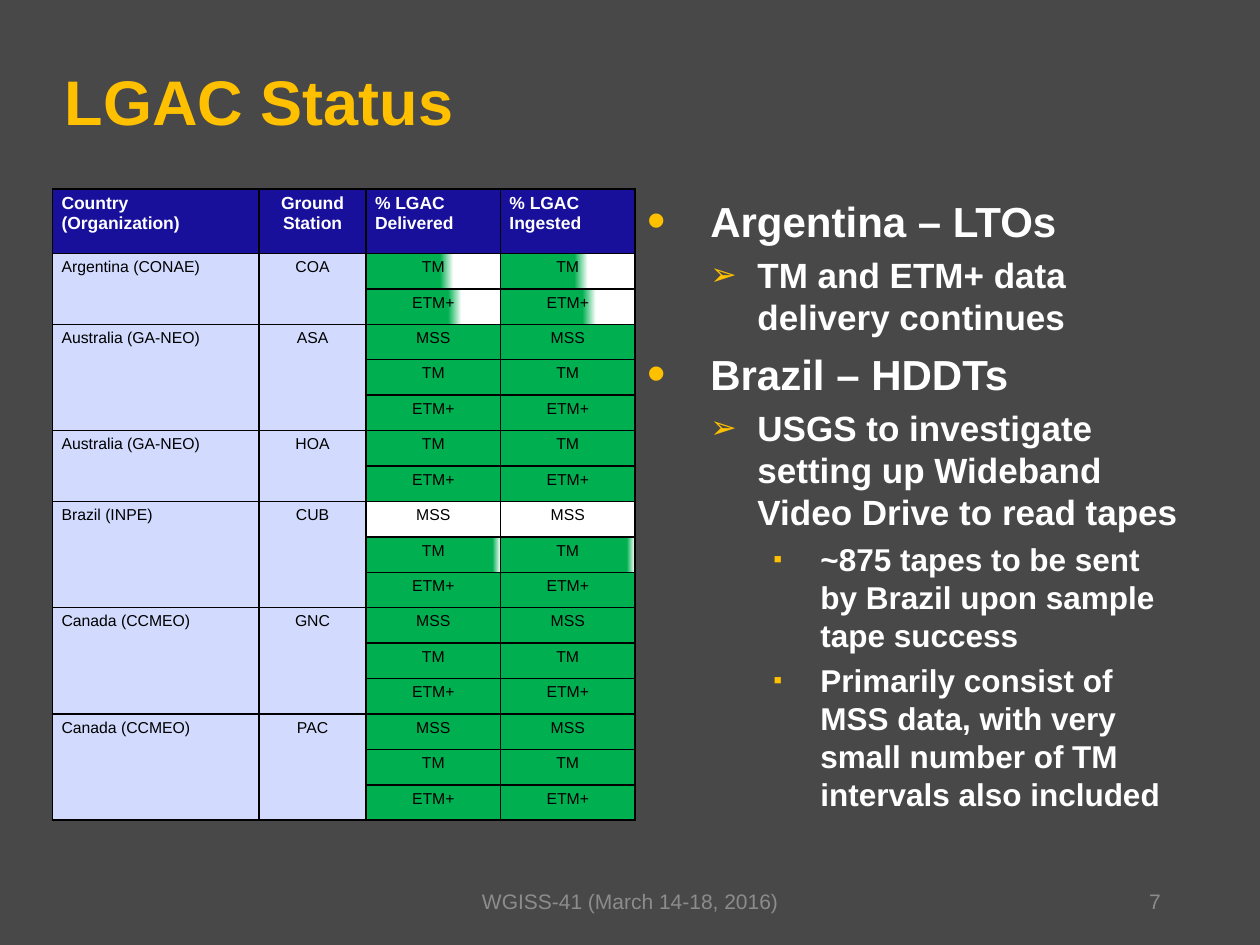
from lxml import etree
from pptx import Presentation
from pptx import util as u
from pptx.dml.color import RGBColor
from pptx.enum import text
from pptx.oxml import ns

FONT = "Arial"
COLORS = {
    "background": "484848", "gold": "FFC000", "white": "FFFFFF", "black": "000000",
    "header": "180F9B", "station": "D2DBFE", "done": "00B050", "muted": "8C8C8C",
}
LEFT, CENTER, RIGHT = text.PP_ALIGN.LEFT, text.PP_ALIGN.CENTER, text.PP_ALIGN.RIGHT

HEADINGS = ["Country (Organization)", "Ground Station", "% LGAC Delivered", "% LGAC Ingested"]
COLUMN_WIDTHS = [4.16, 2.16, 2.71, 2.71]
STATIONS = [
    ("Argentina (CONAE)", "COA", [("TM", (55, 65)), ("ETM+", (61, 71))]),
    ("Australia (GA-NEO)", "ASA", [("MSS", "done"), ("TM", "done"), ("ETM+", "done")]),
    ("Australia (GA-NEO)", "HOA", [("TM", "done"), ("ETM+", "done")]),
    ("Brazil (INPE)", "CUB", [("MSS", "white"), ("TM", (94, 100)), ("ETM+", "done")]),
    ("Canada (CCMEO)", "GNC", [("MSS", "done"), ("TM", "done"), ("ETM+", "done")]),
    ("Canada (CCMEO)", "PAC", [("MSS", "done"), ("TM", "done"), ("ETM+", "done")]),
]
LEVELS = [
    {"size": 24, "margin": 1.27, "hanging": 1.27, "bullet": "•", "scale": 125},
    {"size": 20, "margin": 2.22, "hanging": 0.95, "bullet": "➢", "scale": 90},
    {"size": 18, "margin": 3.49, "hanging": 0.95, "bullet": "▪", "scale": 80},
]
NEWS = [
    (0, "Argentina – LTOs"),
    (1, "TM and ETM+ data delivery continues"),
    (0, "Brazil – HDDTs"),
    (1, "USGS to investigate setting up Wideband Video Drive to read tapes"),
    (2, "~875 tapes to be sent by Brazil upon sample tape success"),
    (2, "Primarily consist of MSS data, with very small number of TM intervals also included"),
]


def rgb(name):
    return RGBColor.from_string(COLORS[name])


def add_element(parent, tag, **attributes):
    return etree.SubElement(parent, ns.qn(tag), attributes)


def write(paragraph, words, size, color, bold=False, alignment=LEFT):
    paragraph.alignment = alignment
    run = paragraph.add_run()
    run.text = words
    for name, value in {"name": FONT, "size": u.Pt(size), "bold": bold}.items():
        setattr(run.font, name, value)
    run.font.color.rgb = rgb(color)


def add_frame(slide, box, anchor):
    frame = slide.shapes.add_textbox(*map(u.Cm, box)).text_frame
    for name, value in {"word_wrap": True, "vertical_anchor": anchor}.items():
        setattr(frame, name, value)
    return frame


def add_line_of_text(slide, box, words, **formats):
    frame = add_frame(slide, box, text.MSO_ANCHOR.MIDDLE)
    write(frame.paragraphs[0], words, **formats)


def add_bullet(paragraph, level):
    properties = paragraph._p.get_or_add_pPr()
    properties.set("marL", str(u.Cm(level["margin"])))
    properties.set("indent", str(-u.Cm(level["hanging"])))
    color = add_element(properties, "a:buClr")
    add_element(color, "a:srgbClr", val=COLORS["gold"])
    add_element(properties, "a:buSzPct", val=str(level["scale"] * 1000))
    add_element(properties, "a:buFont", typeface=FONT)
    add_element(properties, "a:buChar", char=level["bullet"])


def add_news(slide, box):
    frame = add_frame(slide, box, text.MSO_ANCHOR.TOP)
    for index, (depth, words) in enumerate(NEWS):
        level = LEVELS[depth]
        paragraph = frame.add_paragraph() if index else frame.paragraphs[0]
        paragraph.level = depth
        add_bullet(paragraph, level)
        paragraph.space_before = u.Pt(0.24 * level["size"] if index else 0)
        write(paragraph, words, level["size"], "white", bold=True)


def fill_cell(cell, fill):
    if isinstance(fill, str):
        cell.fill.solid()
        cell.fill.fore_color.rgb = rgb(fill)
        return
    cell.fill.gradient()
    cell.fill.gradient_angle = 0
    for stop, position, color in zip(cell.fill.gradient_stops, fill, ("done", "white")):
        stop.position = position / 100
        stop.color.rgb = rgb(color)


def add_borders(cell):
    properties = cell._tc.get_or_add_tcPr()
    for index, side in enumerate(("a:lnL", "a:lnR", "a:lnT", "a:lnB")):
        line = add_element(properties, side, w=str(u.Pt(1)))
        add_element(add_element(line, "a:solidFill"), "a:srgbClr", val=COLORS["black"])
        properties.insert(index, line)


def format_cell(cell, words, fill, **formats):
    margins = {"margin_left": 0.18, "margin_right": 0.18, "margin_top": 0.1, "margin_bottom": 0.1}
    for name, value in margins.items():
        setattr(cell, name, u.Cm(value))
    fill_cell(cell, fill)
    add_borders(cell)
    write(cell.text_frame.paragraphs[0], words, **formats)


def add_status_table(slide, box, header_height=1.3):
    row_count = 1 + sum(len(sensors) for _, _, sensors in STATIONS)
    shape = slide.shapes.add_table(row_count, len(HEADINGS), *map(u.Cm, box))
    table = shape.table
    for column, width in zip(table.columns, COLUMN_WIDTHS):
        column.width = u.Cm(width)
    row_height = (box[3] - header_height) / (row_count - 1)
    for index, row in enumerate(table.rows):
        row.height = u.Cm(row_height if index else header_height)

    for column, words in enumerate(HEADINGS):
        format_cell(table.cell(0, column), words, "header", size=10, color="white",
                    bold=True, alignment=CENTER if column == 1 else LEFT)
    top = 1
    for country, station, sensors in STATIONS:
        for offset, (sensor, fill) in enumerate(sensors):
            names = ("", "") if offset else (country, station)
            fills = ("station", "station", fill, fill)
            for column, words in enumerate((*names, sensor, sensor)):
                format_cell(table.cell(top + offset, column), words, fills[column], size=9,
                            color="black", alignment=CENTER if column else LEFT)
        bottom = top + len(sensors) - 1
        for column in range(2):
            table.cell(top, column).merge(table.cell(bottom, column))
        top = bottom + 1


def main():
    presentation = Presentation()
    presentation.slide_width, presentation.slide_height = u.Cm(25.4), u.Cm(19.05)
    slide = presentation.slides.add_slide(presentation.slide_layouts[6])
    slide.background.fill.solid()
    slide.background.fill.fore_color.rgb = rgb("background")

    add_line_of_text(slide, (1.06, 0.43, 23.07, 3.18), "LGAC Status",
                     size=36, color="gold", bold=True)
    add_news(slide, (12.8, 3.81, 11.33, 12.5))
    add_status_table(slide, (1.06, 3.81, 11.74, 12.73))
    add_line_of_text(slide, (8.41, 17.65, 8.59, 1.02), "WGISS-41 (March 14-18, 2016)",
                     size=12, color="muted", alignment=CENTER)
    add_line_of_text(slide, (17.93, 17.65, 5.72, 1.02), "7",
                     size=12, color="muted", alignment=RIGHT)
    presentation.save("out.pptx")


if __name__ == "__main__":
    main()
